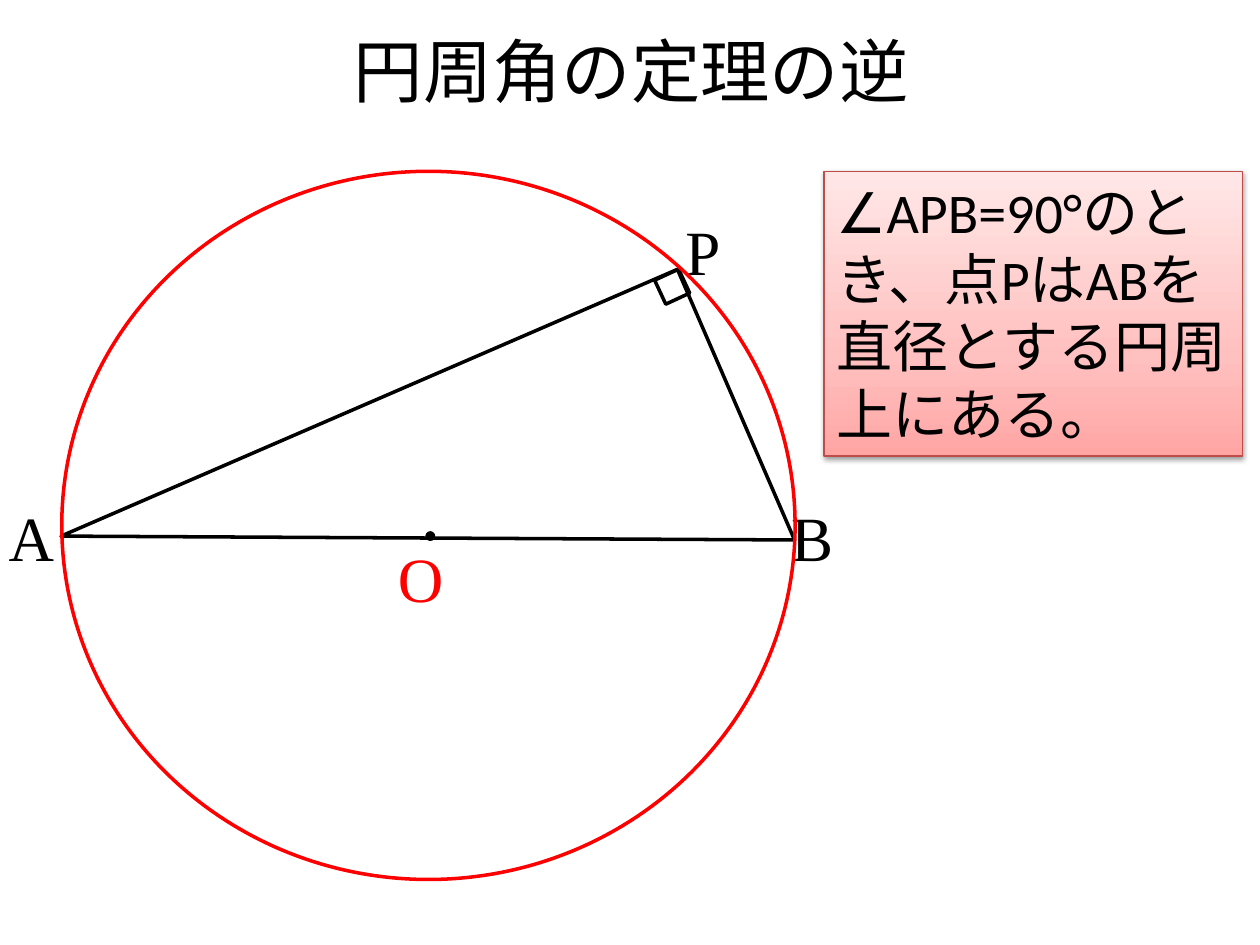
from copy import deepcopy

from lxml import etree
from pptx import Presentation
from pptx.dml.color import RGBColor
from pptx.enum.shapes import MSO_SHAPE
from pptx.enum.text import MSO_ANCHOR, PP_ALIGN
from pptx.oxml.ns import qn
from pptx.util import Inches, Pt

ELLIPSE = MSO_SHAPE.OVAL
RIGHT_TRIANGLE = MSO_SHAPE.RIGHT_TRIANGLE
SQUARE = MSO_SHAPE.RECTANGLE
CENTER, LEFT = PP_ALIGN.CENTER, PP_ALIGN.LEFT
MIDDLE, TOP = MSO_ANCHOR.MIDDLE, MSO_ANCHOR.TOP

COLUMNS, ROWS = 100, 75
UNIT = Inches(10) / COLUMNS
BLACK, RED = "000000", "FF0000"
SANS, SERIF = "Calibri", "Times New Roman"


def color(value):
    """Turn a hex string into a colour."""
    return RGBColor.from_string(value)


def grid(*cells):
    """Turn columns and rows into slide lengths."""
    return [round(cell * UNIT) for cell in cells]


def within(box, part):
    """Shift a part's place by the corner of its box."""
    return part[0] + box[0], part[1] + box[1], part[2], part[3]


def add_text(slide, box, words, size, font, ink=BLACK, wrap=True, align=LEFT, anchor=TOP):
    """Add one run of text in a box and return the box."""
    holder = slide.shapes.add_textbox(*grid(*box))
    frame = holder.text_frame
    frame.word_wrap = wrap
    frame.vertical_anchor = anchor
    paragraph = frame.paragraphs[0]
    paragraph.alignment = align
    run = paragraph.add_run()
    run.text = words
    run.font.size = Pt(size)
    run.font.name = font
    run.font.color.rgb = color(ink)
    return holder


def add_outline(slide, preset, box, ink=BLACK, turn=0, filled=False):
    """Add a preset shape with a two point line."""
    outline = slide.shapes.add_shape(preset, *grid(*box))
    outline.shadow.inherit = False
    outline.rotation = turn
    outline.line.color.rgb = color(ink)
    outline.line.width = Pt(2)
    if filled:
        outline.fill.solid()
        outline.fill.fore_color.rgb = color(ink)
    else:
        outline.fill.background()


def add_soft_shadow(shape):
    """Cast a soft black shadow straight down."""
    shape.shadow.inherit = False
    effects = shape._element.spPr.find(qn("a:effectLst"))
    shadow = etree.SubElement(
        effects, qn("a:outerShdw"), blurRad=str(Pt(3.1)), dist=str(Pt(1.6)),
        dir="5400000", rotWithShape="0")
    tone = etree.SubElement(shadow, qn("a:srgbClr"), val=BLACK)
    etree.SubElement(tone, qn("a:alpha"), val="38000")


def add_gradient(shape, stops):
    """Fill a shape with a gradient that runs upwards."""
    shape.fill.gradient()
    shape.fill.gradient_angle = 90
    stop_list = shape._element.spPr.find(".//" + qn("a:gsLst"))
    while len(stop_list) < len(stops):
        stop_list.append(deepcopy(stop_list[-1]))
    for stop, (position, tint) in zip(shape.fill.gradient_stops, stops):
        stop.position = position
        stop.color.rgb = color(tint)


def draw_title(slide, box):
    """Write the centred heading."""
    add_text(slide, box, "円周角の定理の逆", 39.6, SANS, align=CENTER, anchor=MIDDLE)


def draw_circle_figure(slide, box):
    """Draw the triangle on its diameter, the point names and the circle."""
    add_outline(slide, RIGHT_TRIANGLE, within(box, (2.4, 17.4, 53.3, 23.4)), turn=156.6)
    add_outline(slide, SQUARE, within(box, (47.4, 8.1, 2.1, 2.1)), turn=335.1)
    add_outline(slide, ELLIPSE, within(box, (29, 28.7, 0.5, 0.5)), filled=True)
    points = [
        ("A", -5.2, 25.5, 5.2, BLACK),
        ("B", 56.9, 25.5, 5.1, BLACK),
        ("P", 48.5, 2.8, 4.9, BLACK),
        ("O", 25.7, 28.7, 5.4, RED),
    ]
    for point, left, top, width, ink in points:
        add_text(slide, within(box, (left, top, width, 7.1)), point, 36, SERIF, ink, wrap=False)
    add_outline(slide, ELLIPSE, box, RED)


def draw_theorem(slide, box):
    """Write the theorem on a shaded red panel."""
    theorem = add_text(
        slide, box, "∠APB=90°のとき、点PはABを直径とする円周上にある。", 32, SANS)
    add_gradient(theorem, [(0, "FFA6A5"), (0.35, "FFC0BF"), (1, "FFE7E7")])
    theorem.line.color.rgb = color("BF4C48")
    theorem.line.width = Pt(0.75)
    add_soft_shadow(theorem)


def main():
    """Build and save the slide."""
    deck = Presentation()
    deck.slide_width, deck.slide_height = grid(COLUMNS, ROWS)
    slide = deck.slides.add_slide(deck.slide_layouts[6])
    draw_title(slide, (5.1, 2.1, 90, 6.9))
    draw_circle_figure(slide, (4.9, 13.6, 58.2, 56.2))
    draw_theorem(slide, (65.4, 13.6, 33.2, 22.6))
    deck.save("out.pptx")


if __name__ == "__main__":
    main()
